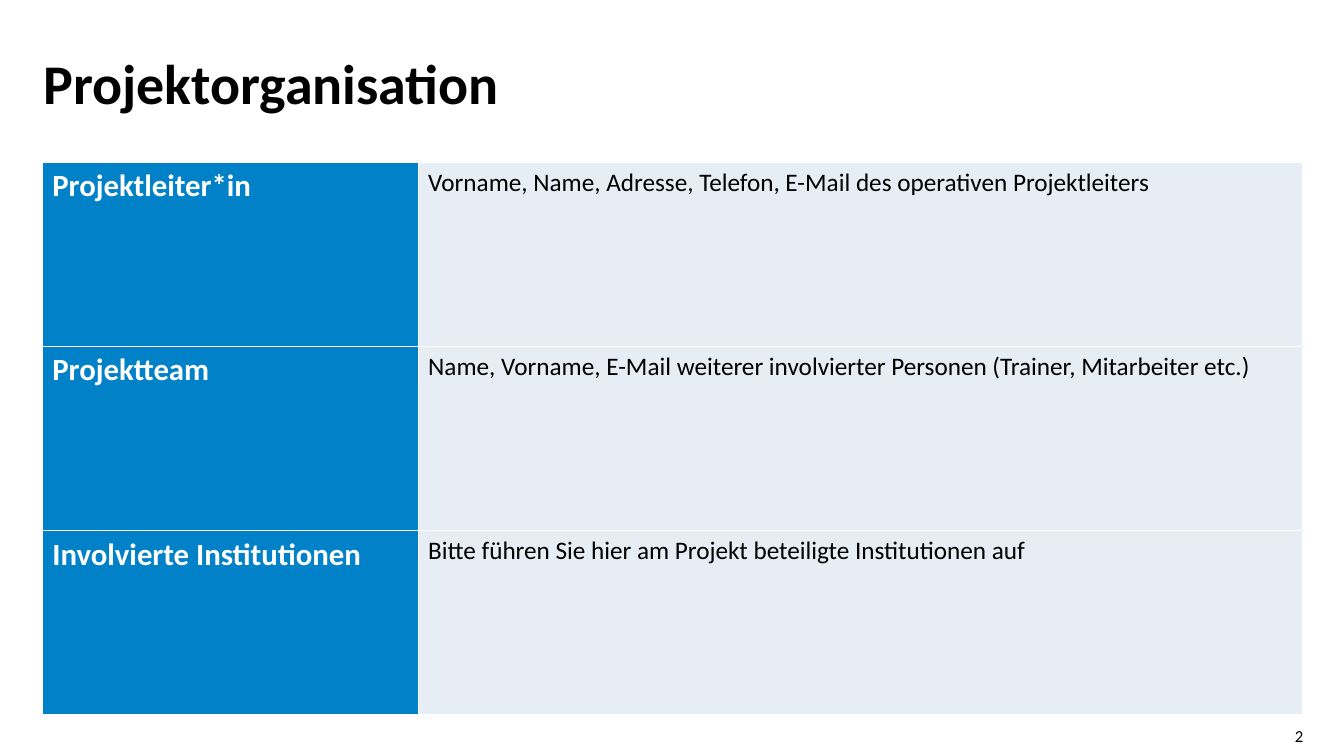
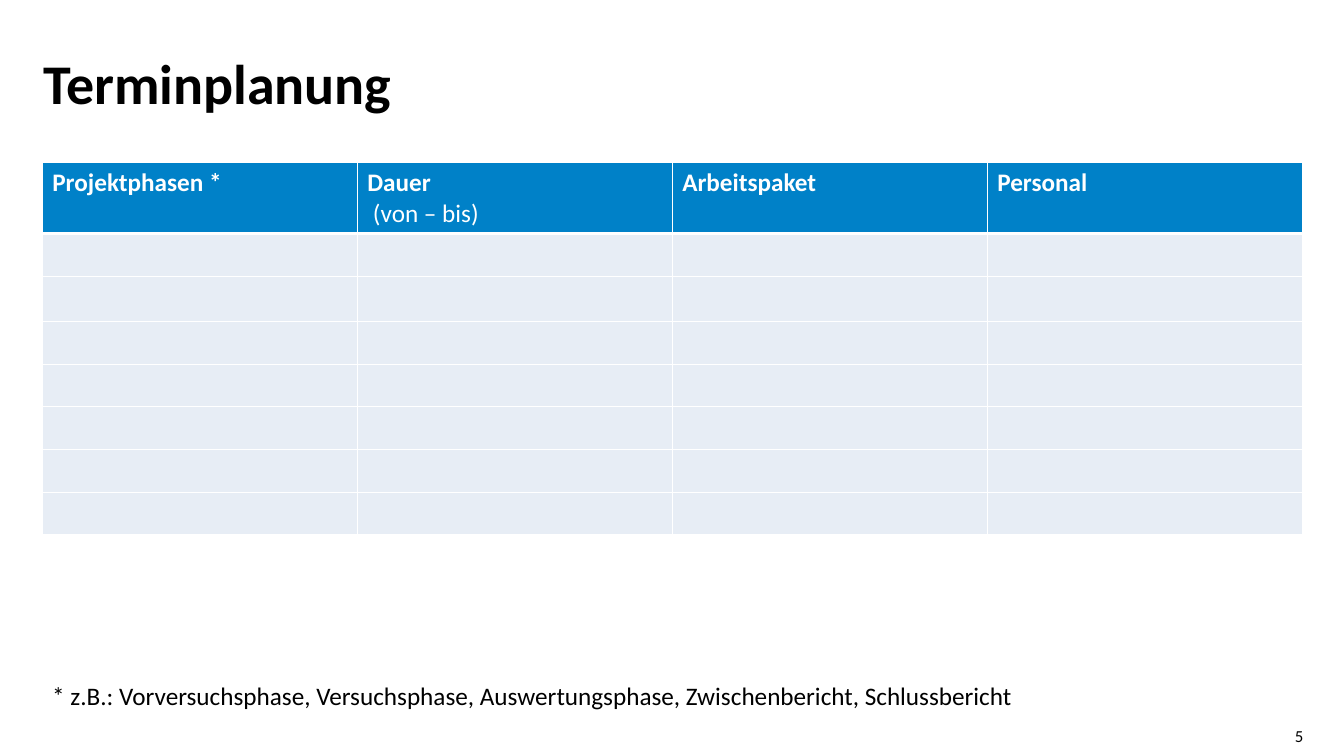
"""Build the project organisation and scheduling slides."""
from lxml import etree
from pptx import Presentation
from pptx.dml.color import RGBColor
from pptx.enum.text import MSO_ANCHOR as Anchor, MSO_AUTO_SIZE as AutoSize, PP_ALIGN as Align
from pptx.oxml.ns import qn
from pptx.util import Pt

ORGANISATION = [
    ("Projektleiter*in", "Vorname, Name, Adresse, Telefon, E-Mail des operativen Projektleiters"),
    ("Projektteam", "Name, Vorname, E-Mail weiterer involvierter Personen (Trainer, Mitarbeiter etc.)"),
    ("Involvierte Institutionen", "Bitte führen Sie hier am Projekt beteiligte Institutionen auf"),
]
PHASE_HEADERS = [("Projektphasen *",), ("Dauer", " (von – bis)"), ("Arbeitspaket",), ("Personal",)]
PHASE_ROW_HEIGHTS = [30.5, 32.4, 30.5, 30.5, 30.5, 30.5, 30.5]
PHASE_NOTE = "* z.B.: Vorversuchsphase, Versuchsphase, Auswertungsphase, Zwischenbericht, Schlussbericht"

FONT = "Calibri"
BLUE = RGBColor(0x00, 0x81, 0xC8)
PALE = RGBColor(0xE7, 0xED, 0xF5)
WHITE = RGBColor(0xFF, 0xFF, 0xFF)
BLACK = RGBColor(0x00, 0x00, 0x00)
LEFT, TABLE_TOP, WIDTH = 30.2, 116, 900


def format_text(paragraph, size, color=BLACK, bold=False):
    font = paragraph.font
    font.name, font.size, font.bold = FONT, Pt(size), bold
    font.color.rgb = color


def clear_insets(frame):
    frame.margin_left = frame.margin_top = frame.margin_right = frame.margin_bottom = 0


def add_text(slide, text, box, size):
    shape = slide.shapes.add_textbox(*map(Pt, box))
    frame = shape.text_frame
    frame.word_wrap = True
    frame.text = text
    format_text(frame.paragraphs[0], size)
    return frame


def add_slide(presentation, title, number):
    slide = presentation.slides.add_slide(presentation.slide_layouts[5])
    shape = slide.shapes.title
    shape.left, shape.top, shape.width, shape.height = map(Pt, (31, 40.3, 720, 61.2))
    frame = shape.text_frame
    frame.text = title
    frame.auto_size = AutoSize.NONE
    frame.vertical_anchor = Anchor.TOP
    clear_insets(frame)
    paragraph = frame.paragraphs[0]
    paragraph.alignment = Align.LEFT
    paragraph.line_spacing = 0.9
    format_text(paragraph, 40, bold=True)

    footer = add_text(slide, number, (897, 518.4, 34, 14.4), 12)
    clear_insets(footer)
    footer.vertical_anchor = Anchor.MIDDLE
    footer.paragraphs[0].alignment = Align.RIGHT
    return slide


def add_table(slide, column_widths, row_heights):
    frame = slide.shapes.add_table(len(row_heights), len(column_widths), Pt(LEFT), Pt(TABLE_TOP),
                                   Pt(sum(column_widths)), Pt(sum(row_heights)))
    table = frame.table
    table.first_row = table.horz_banding = False
    for column, width in zip(table.columns, column_widths):
        column.width = Pt(width)
    for row, height in zip(table.rows, row_heights):
        row.height = Pt(height)
    return table


def style_cell(cell, fill, top=1, bottom=1):
    properties = cell._tc.get_or_add_tcPr()
    for side, width in (("L", 1), ("R", 1), ("T", top), ("B", bottom)):
        line = etree.SubElement(properties, qn(f"a:ln{side}"), w=str(Pt(width)))
        solid = etree.SubElement(line, qn("a:solidFill"))
        etree.SubElement(solid, qn("a:srgbClr"), val=str(WHITE))
    cell.fill.solid()
    cell.fill.fore_color.rgb = fill


def build_organisation(presentation):
    slide = add_slide(presentation, "Projektorganisation", "2")
    table = add_table(slide, (268.5, WIDTH - 268.5), [131.6] * len(ORGANISATION))
    styles = [(BLUE, 22, WHITE, True), (PALE, 18, BLACK, False)]
    for row, texts in enumerate(ORGANISATION):
        for column, (text, (fill, size, color, bold)) in enumerate(zip(texts, styles)):
            cell = table.cell(row, column)
            style_cell(cell, fill)
            cell.text = text
            format_text(cell.text_frame.paragraphs[0], size, color, bold)


def build_schedule(presentation):
    slide = add_slide(presentation, "Terminplanung", "5")
    count = len(PHASE_HEADERS)
    table = add_table(slide, [WIDTH / count] * count, [50.8] + PHASE_ROW_HEIGHTS)
    for column, lines in enumerate(PHASE_HEADERS):
        header = table.cell(0, column)
        style_cell(header, BLUE, bottom=3)
        header.text = "\n".join(lines)
        for index, paragraph in enumerate(header.text_frame.paragraphs):
            format_text(paragraph, 18, WHITE, bold=index == 0)
        for row in range(1, len(PHASE_ROW_HEIGHTS) + 1):
            cell = table.cell(row, column)
            style_cell(cell, PALE, top=3 if row == 1 else 1)
            format_text(cell.text_frame.paragraphs[0], 18)
    note = add_text(slide, PHASE_NOTE, (LEFT, 482.4, WIDTH, 29), 18)
    note.auto_size = AutoSize.SHAPE_TO_FIT_TEXT


def main():
    presentation = Presentation()
    presentation.slide_width, presentation.slide_height = Pt(960), Pt(540)
    build_organisation(presentation)
    build_schedule(presentation)
    presentation.save("out.pptx")


if __name__ == "__main__":
    main()
